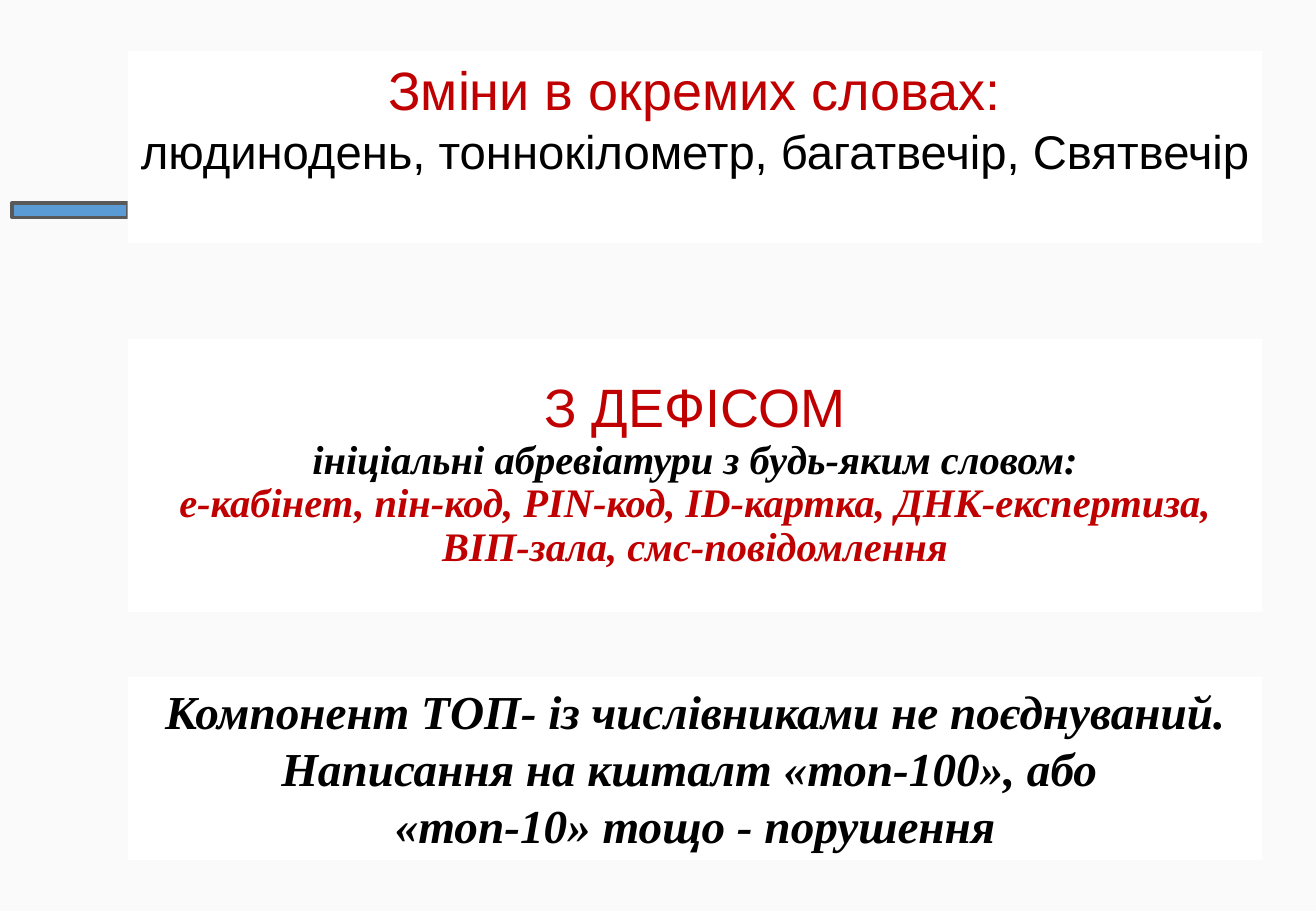
from pptx import Presentation
from pptx.dml.color import RGBColor
from pptx.enum.shapes import MSO_SHAPE
from pptx.enum.text import MSO_ANCHOR, PP_ALIGN
from pptx.util import Inches, Pt

COLORS = {
    "background": "FAFAFA",
    "panel": "FFFFFF",
    "accent": "5B9BD5",
    "outline": "595959",
    "red": "C00000",
    "black": "000000",
}
PANEL_LEFT, PANEL_WIDTH = 1.05, 9.34


def rgb(name):
    return RGBColor.from_string(COLORS[name])


def add_panel(slide, top, height, lines, anchor=MSO_ANCHOR.TOP, spacing=1.0):
    panel = slide.shapes.add_textbox(
        Inches(PANEL_LEFT), Inches(top), Inches(PANEL_WIDTH), Inches(height)
    )
    panel.fill.solid()
    panel.fill.fore_color.rgb = rgb("panel")
    frame = panel.text_frame
    frame.word_wrap = True
    frame.vertical_anchor = anchor
    for index, (text, size, color, emphasized) in enumerate(lines):
        paragraph = frame.add_paragraph() if index else frame.paragraphs[0]
        paragraph.alignment = PP_ALIGN.CENTER
        paragraph.line_spacing = spacing
        run = paragraph.add_run()
        run.text = text
        run.font.name = "Times New Roman" if emphasized else "Arial"
        run.font.size = Pt(size)
        run.font.bold = run.font.italic = emphasized
        run.font.color.rgb = rgb(color)


def add_accent_bar(slide):
    bar = slide.shapes.add_shape(
        MSO_SHAPE.RECTANGLE, Inches(0.1), Inches(1.67), Inches(0.95), Inches(0.12)
    )
    bar.shadow.inherit = False
    bar.fill.solid()
    bar.fill.fore_color.rgb = rgb("accent")
    bar.line.color.rgb = rgb("outline")
    bar.line.width = Pt(2)


def main():
    deck = Presentation()
    deck.slide_width, deck.slide_height = Inches(10.83), Inches(7.5)
    slide = deck.slides.add_slide(deck.slide_layouts[6])
    slide.background.fill.solid()
    slide.background.fill.fore_color.rgb = rgb("background")

    add_accent_bar(slide)
    add_panel(slide, 0.42, 1.58, [
        ("Зміни в окремих словах:", 32, "red", False),
        ("людинодень, тоннокілометр, багатвечір, Святвечір", 28, "black", False),
    ])
    add_panel(slide, 2.79, 2.25, [
        ("З ДЕФІСОМ", 32, "red", False),
        ("ініціальні абревіатури з будь-яким словом:", 24, "black", True),
        ("е-кабінет, пін-код, PIN-код, ID-картка, ДНК-експертиза, "
         "ВІП-зала, смс-повідомлення", 24, "red", True),
    ], MSO_ANCHOR.MIDDLE, 0.9)
    add_panel(slide, 5.57, 1.51, [
        ("Компонент ТОП- із числівниками не поєднуваний. "
         "Написання на кшталт «топ-100», або ", 28, "black", True),
        ("«топ-10» тощо - порушення", 28, "black", True),
    ])
    deck.save("out.pptx")


if __name__ == "__main__":
    main()
